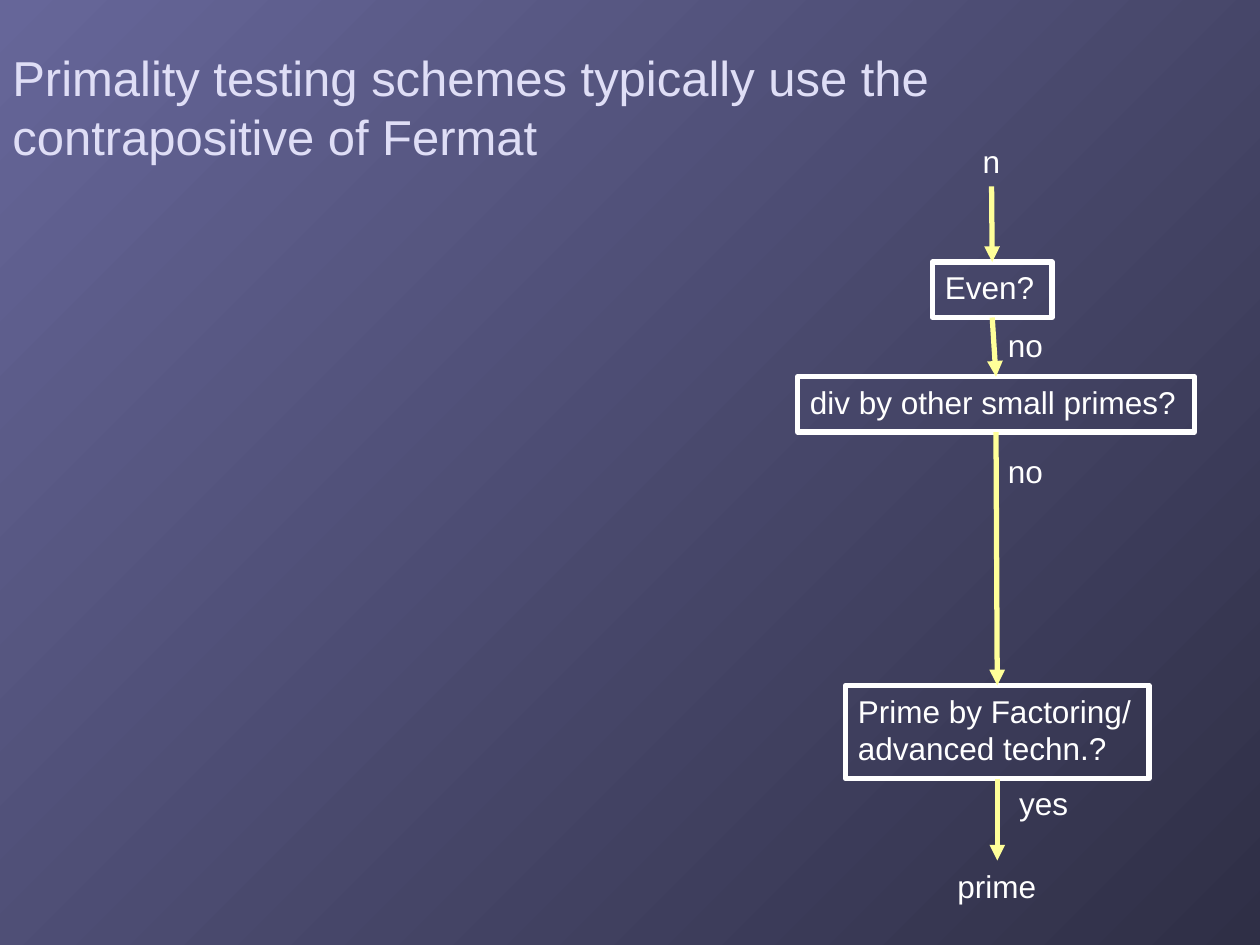
from dataclasses import dataclass

from lxml import etree
from pptx import Presentation
from pptx.dml.color import RGBColor
from pptx.enum.shapes import MSO_CONNECTOR, MSO_SHAPE
from pptx.enum.text import MSO_ANCHOR, MSO_AUTO_SIZE, PP_ALIGN
from pptx.oxml.ns import qn
from pptx.util import Inches, Pt

RECT = MSO_SHAPE.RECTANGLE
STRAIGHT = MSO_CONNECTOR.STRAIGHT
TOP = MSO_ANCHOR.TOP
LEFT = PP_ALIGN.LEFT
GROW = MSO_AUTO_SIZE.SHAPE_TO_FIT_TEXT
TOP_SIDE, BOTTOM_SIDE = 0, 2


@dataclass(frozen=True)
class Theme:
    font: str = "Arial"
    title_size: int = 28
    body_size: int = 18
    line_width: int = 3
    title: str = "DFDEF6"
    text: str = "FFFFFF"
    arrow: str = "FFFF99"
    background: tuple = ("666699", "2F2F46")


class FlowSlide:
    def __init__(self, prs, theme):
        self.theme = theme
        self.slide = prs.slides.add_slide(prs.slide_layouts[6])

    def background(self):
        fill = self.slide.background.fill
        fill.gradient()
        fill.gradient_angle = 315
        for stop, color in zip(fill.gradient_stops, self.theme.background):
            stop.color.rgb = RGBColor.from_string(color)

    def set_text(self, s, text, size, color):
        tf = s.text_frame
        tf.vertical_anchor = TOP
        p = tf.paragraphs[0]
        p.text = text
        p.alignment = LEFT
        p.font.name = self.theme.font
        p.font.size = Pt(size)
        p.font.color.rgb = RGBColor.from_string(color)
        return tf

    def title(self, text, *frame):
        s = self.slide.shapes.add_textbox(*map(Inches, frame))
        tf = self.set_text(s, text, self.theme.title_size, self.theme.title)
        tf.word_wrap = True

    def body(self, s, text):
        tf = self.set_text(s, text, self.theme.body_size, self.theme.text)
        tf.word_wrap = False
        tf.auto_size = GROW
        return s

    def label(self, text, *frame):
        return self.body(self.slide.shapes.add_textbox(*map(Inches, frame)), text)

    def box(self, text, *frame):
        s = self.slide.shapes.add_shape(RECT, *map(Inches, frame))
        s.shadow.inherit = False
        s.fill.background()
        s.line.color.rgb = RGBColor.from_string(self.theme.text)
        s.line.width = Pt(self.theme.line_width)
        return self.body(s, text)

    def arrow(self, start, end):
        s = self.slide.shapes.add_connector(STRAIGHT, 0, 0, 0, 0)
        s.begin_connect(start, BOTTOM_SIDE)
        s.end_connect(end, TOP_SIDE)
        s.line.color.rgb = RGBColor.from_string(self.theme.arrow)
        s.line.width = Pt(self.theme.line_width)
        ln = s._element.spPr.find(qn("a:ln"))
        etree.SubElement(ln, qn("a:tailEnd"), type="triangle")
        etree.SubElement(s._element.spPr, qn("a:effectLst"))


def main():
    prs = Presentation()
    prs.slide_width, prs.slide_height = Inches(10), Inches(7.5)
    flow = FlowSlide(prs, Theme())
    flow.background()
    flow.title(
        "Primality testing schemes typically use the contrapositive of Fermat",
        0, 0.33, 9, 1.25,
    )
    steps = [
        flow.label("n", 7.7, 1.08, 0.34, 0.4),
        flow.box("Even?", 7.4, 2.08, 0.95, 0.44),
        flow.box("div by other small primes?", 6.33, 2.99, 3.15, 0.44),
        flow.box("Prime by Factoring/\nadvanced techn.?", 6.71, 5.44, 2.41, 0.74),
        flow.label("prime", 7.5, 6.83, 0.83, 0.4),
    ]
    for start, end in zip(steps, steps[1:]):
        flow.arrow(start, end)
    for answer, left, top, width in (
        ("no", 7.9, 2.54, 0.48),
        ("no", 7.9, 3.54, 0.48),
        ("yes", 7.99, 6.17, 0.59),
    ):
        flow.label(answer, left, top, width, 0.4)
    prs.save("out.pptx")


if __name__ == "__main__":
    main()
